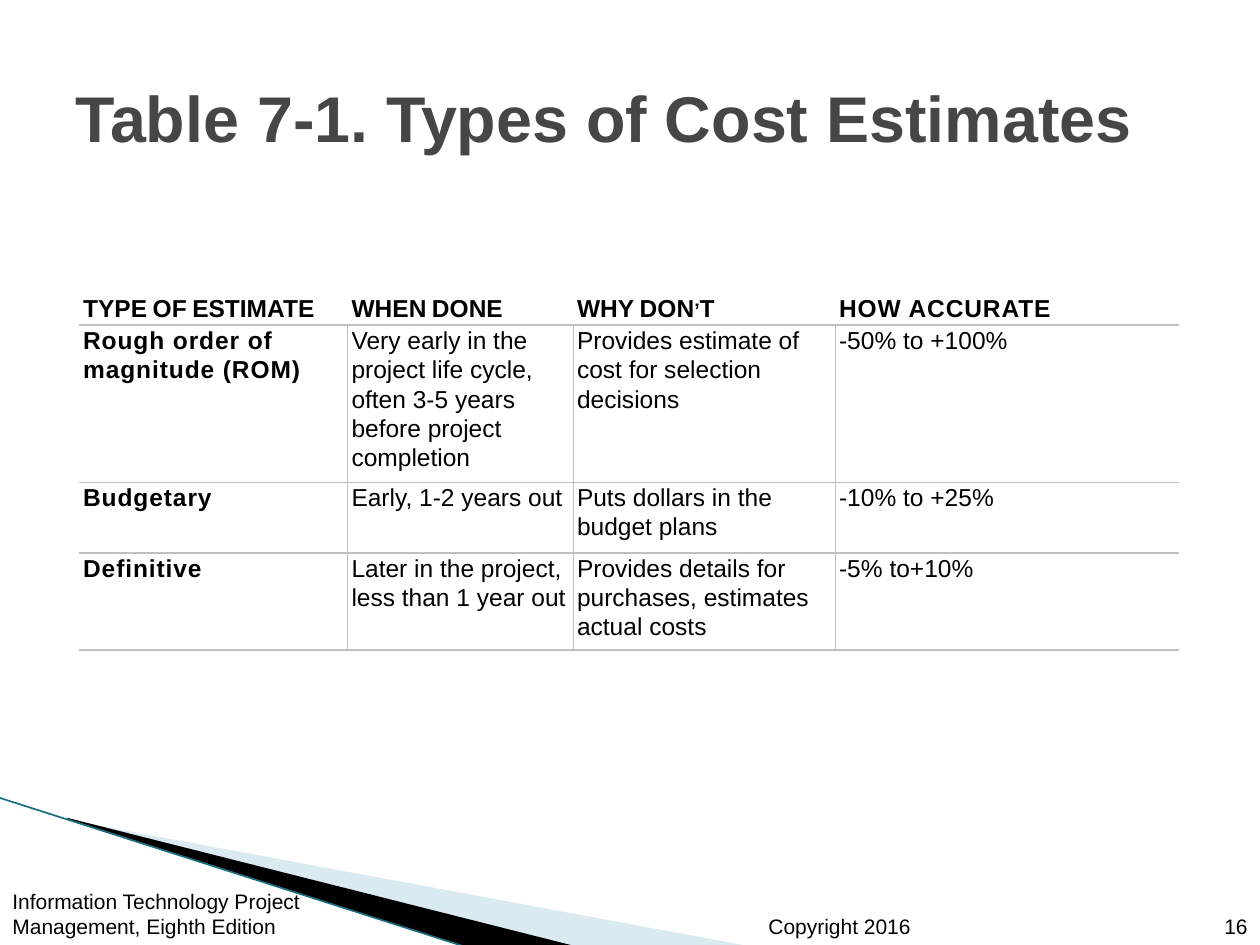
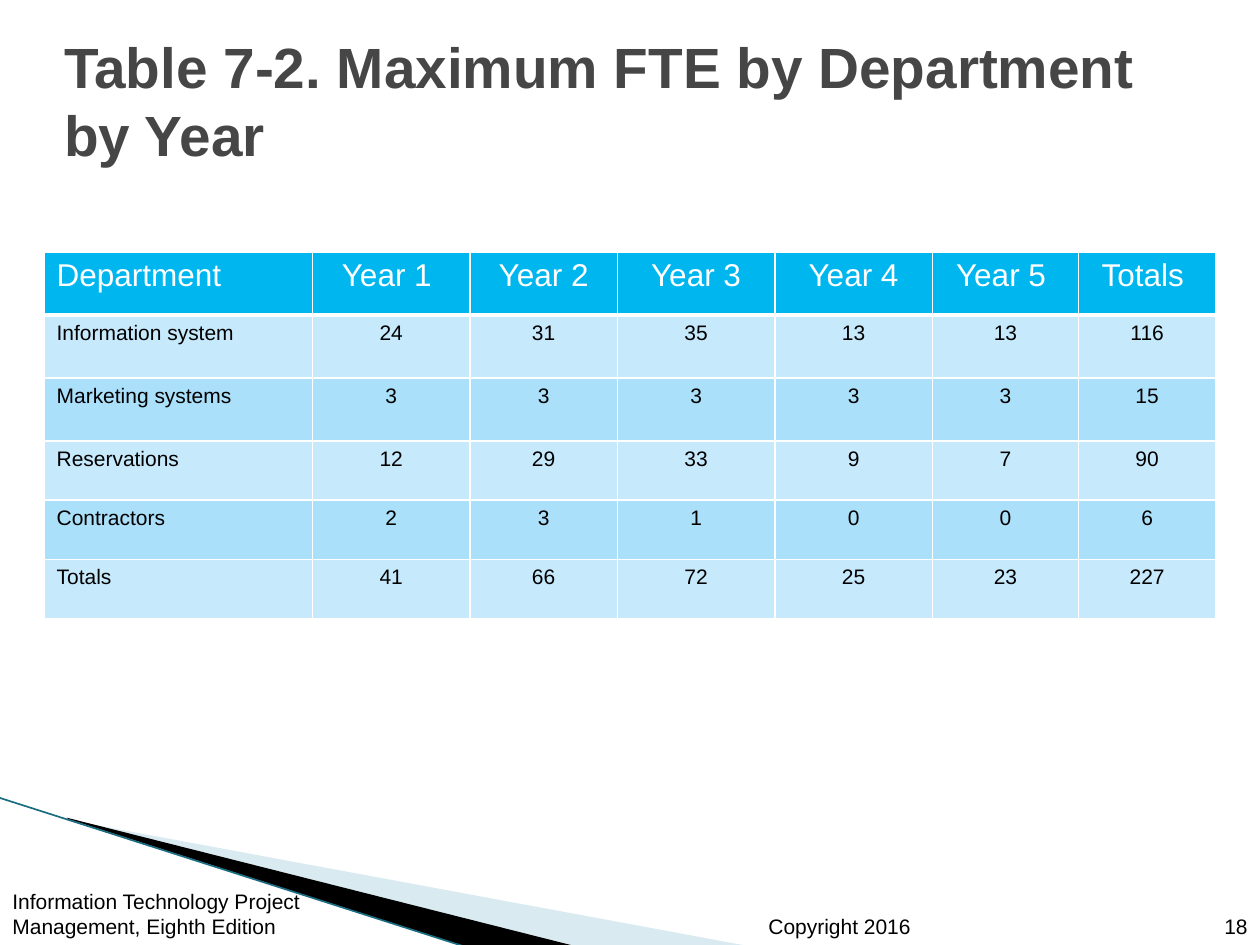
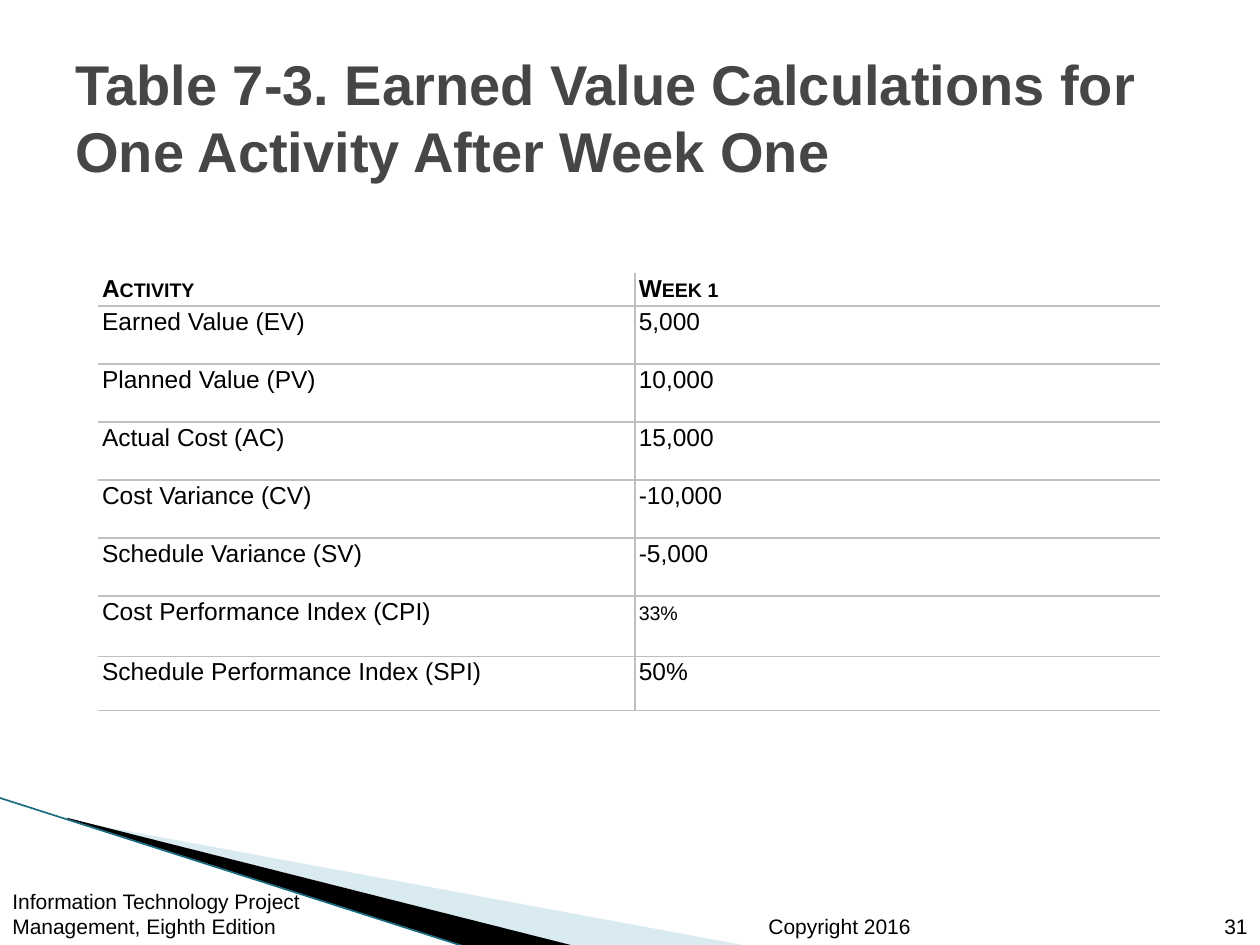
"""Build three slides of project cost tables with a shared title, swoosh and footer."""
from dataclasses import dataclass
from itertools import product

from lxml.etree import SubElement
from pptx import Presentation
from pptx.dml.color import RGBColor as Rgb
from pptx.enum.shapes import MSO_CONNECTOR as Connector
from pptx.enum.text import MSO_ANCHOR as Anchor, PP_ALIGN as Align
from pptx.oxml.ns import qn
from pptx.util import Inches, Pt


@dataclass(frozen=True)
class Theme:
    font: str = "Arial"
    title: str = "464646"
    text: str = "000000"
    white: str = "FFFFFF"
    rule: str = "BEBFBF"
    header: str = "00B6EF"
    bands: tuple = ("C6E9FC", "AAE0FA")
    swoosh: str = "A0CBDC"
    swoosh_alpha: int = 40
    edge: str = "1A6C80"
    small_size: float = 12
    ruled_size: float = 14
    header_size: float = 18


THEME = Theme()
BOOK = "Information Technology Project Management, Eighth Edition"
COPYRIGHT = "Copyright 2016"
PALE_FRAME = (0.78, 5.47, 4.16, 1.58)
PALE_SWOOSH = [(0.55, 6.51), (5.95, 7.51), (4.56, 7.51), (0.55, 6.5)]
DARK_FRAME = (-0.06, 6.33, 4.16, 0.92)
DARK_SWOOSH = [(0.53, 6.49), (4.57, 7.51), (3.72, 7.52), (0.54, 6.5)]
EDGE_LINE = (-0.01, 6.33, 3.71, 7.52)

PLAIN = {}
CAPS = {"caps": True}
BOLD_CAPS = {"bold": True, "caps": True}
BOLD_SPACED = {"bold": True, "spacing": 50}

SLIDES = [
    {
        "title": "Table 7-1. Types of Cost Estimates",
        "title_at": (0.5, 0.3, 9, 1.25), "title_size": 36.9,
        "book_at": (0, 6.92, 2.92, 0.58), "number": "16",
        "kind": "ruled", "table_at": (0.63, 2.33), "table_height": 2.84,
        "columns": [2.13, 1.79, 2.08, 2.73],
        "heights": [0.23, 1.18, 0.56, 0.77],
        "label_style": BOLD_SPACED, "header_dividers": False,
        "styles": {(0, 3): BOLD_SPACED},
        "rows": [
            ["TYPE OF ESTIMATE", "WHEN DONE", "WHY DON’T", "HOW ACCURATE"],
            ["Rough order of magnitude (ROM)",
             "Very early in the project life cycle, often 3-5 years before project completion",
             "Provides estimate of cost for selection decisions", "-50% to +100%"],
            ["Budgetary", "Early, 1-2 years out",
             "Puts dollars in the budget plans", "-10% to +25%"],
            ["Definitive", "Later in the project, less than 1 year out",
             "Provides details for purchases, estimates actual costs", "-5% to+10%"],
        ],
    },
    {
        "title": "Table 7-2. Maximum FTE by Department by Year",
        "title_at": (0.41, 0.17, 9.09, 1.25), "title_size": 32.4,
        "book_at": (0, 7, 2.92, 0.5), "number": "18",
        "kind": "banded", "table_at": (0.35, 2), "table_height": 2.92,
        "columns": [2.13, 1.25, 1.17, 1.25, 1.25, 1.16, 1.09],
        "heights": [0.5] * 3 + [0.47] * 3,
        "rows": [
            ["Department", "Year 1 ", "Year 2", "Year 3", "Year 4", "Year 5 ", "Totals "],
            ["Information system", "24", "31", "35", "13", "13", "116"],
            ["Marketing systems", "3", "3", "3", "3", "3", "15"],
            ["Reservations", "12", "29", "33", "9", "7", "90"],
            ["Contractors", "2", "3", "1", "0", "0", "6"],
            ["Totals", "41", "66", "72", "25", "23", "227"],
        ],
    },
    {
        "title": "Table 7-3. Earned Value Calculations for One Activity After Week One",
        "title_at": (0.5, 0.3, 9, 1.25), "title_size": 32,
        "book_at": (0, 7, 2.83, 0.5), "number": "31",
        "kind": "ruled", "table_at": (0.78, 2.17), "table_height": 3.48,
        "columns": [4.26, 4.17],
        "heights": [0.26] + [0.46] * 5 + [0.48, 0.43],
        "label_style": PLAIN, "header_dividers": True,
        "styles": {(6, 1): CAPS},
        "rows": [
            ["Activity", "Week 1"],
            ["Earned Value (EV)", "5,000"],
            ["Planned Value (PV)", "10,000"],
            ["Actual Cost (AC)", "15,000"],
            ["Cost Variance (CV)", "-10,000"],
            ["Schedule Variance (SV)", "-5,000"],
            ["Cost Performance Index (CPI)", "33%"],
            ["Schedule Performance Index (SPI)", "50%"],
        ],
    },
]


def add_span(para, text, size, color=THEME.text, bold=False, caps=False, spacing=0):
    span = para.add_run()
    span.text = text
    span.font.name = THEME.font
    span.font.size = Pt(size)
    span.font.bold = bold
    span.font.color.rgb = Rgb.from_string(color)
    properties = span._r.get_or_add_rPr()
    if caps:
        properties.set("cap", "small")
    if spacing:
        properties.set("spc", str(spacing))


def add_text(page, at, text, size, anchor=Anchor.BOTTOM, align=Align.LEFT, **look):
    box = page.shapes.add_textbox(*map(Inches, at))
    frame = box.text_frame
    frame.word_wrap = True
    frame.vertical_anchor = anchor
    para = frame.paragraphs[0]
    para.alignment = align
    add_span(para, text, size, **look)


def set_frame(shape, at):
    left, top, width, height = map(Inches, at)
    shift_x, shift_y = shape.left - left, shape.top - top
    shape.left, shape.top, shape.width, shape.height = left, top, width, height
    outline = next(shape._element.iter(qn("a:path")))
    outline.set("w", str(width))
    outline.set("h", str(height))
    for point in outline.iter(qn("a:pt")):
        point.set("x", str(int(point.get("x")) + shift_x))
        point.set("y", str(int(point.get("y")) + shift_y))


def add_outline(page, at, points, color, alpha=100):
    corners = [(Inches(x), Inches(y)) for x, y in points]
    builder = page.shapes.build_freeform(*corners[0])
    builder.add_line_segments(corners[1:], close=True)
    shape = builder.convert_to_shape()
    set_frame(shape, at)
    shape.shadow.inherit = False
    shape.line.fill.background()
    shape.fill.solid()
    shape.fill.fore_color.rgb = Rgb.from_string(color)
    if alpha < 100:
        tint = shape._element.spPr.find(f"{qn('a:solidFill')}/{qn('a:srgbClr')}")
        SubElement(tint, qn("a:alpha")).set("val", str(alpha * 1000))


def add_background(page):
    add_outline(page, PALE_FRAME, PALE_SWOOSH, THEME.swoosh, THEME.swoosh_alpha)
    add_outline(page, DARK_FRAME, DARK_SWOOSH, THEME.text)
    edge = page.shapes.add_connector(Connector.STRAIGHT, *map(Inches, EDGE_LINE))
    edge.line.color.rgb = Rgb.from_string(THEME.edge)
    edge.line.width = Pt(0.95)
    SubElement(edge._element.spPr, qn("a:effectLst"))
    add_text(page, (6, 7.1, 1.75, 0.4), COPYRIGHT, THEME.small_size)


def set_borders(cell, color, widths):
    properties = cell._tc.get_or_add_tcPr()
    for side in "LRTB":
        width = widths.get(side, 0)
        line = SubElement(properties, qn(f"a:ln{side}"), w=str(Pt(width)))
        if width:
            fill = SubElement(line, qn("a:solidFill"))
            SubElement(fill, qn("a:srgbClr"), val=color)
        else:
            SubElement(line, qn("a:noFill"))


def fill_ruled_cell(cell, row, column, content):
    cell.margin_left = cell.margin_right = Inches(0.03)
    cell.margin_top = cell.margin_bottom = 0
    divided = row > 0 or content["header_dividers"]
    last = len(content["columns"]) - 1
    set_borders(cell, THEME.rule, {
        "L": int(divided and column > 0),
        "R": int(divided and column < last),
        "T": int(row > 0),
        "B": 1,
    })
    cell.fill.background()
    usual = BOLD_CAPS if row == 0 else content["label_style"] if column == 0 else PLAIN
    style = content["styles"].get((row, column), usual)
    para = cell.text_frame.paragraphs[0]
    para.line_spacing = 1.07
    add_span(para, content["rows"][row][column], THEME.ruled_size, **style)


def fill_banded_cell(cell, row, column, content):
    header = row == 0
    set_borders(cell, THEME.white, {
        "L": 1, "R": 1, "T": 3 if row == 1 else 1, "B": 3 if header else 1,
    })
    cell.fill.solid()
    band = THEME.header if header else THEME.bands[(row - 1) % 2]
    cell.fill.fore_color.rgb = Rgb.from_string(band)
    para = cell.text_frame.paragraphs[0]
    para.alignment = Align.CENTER if column else Align.LEFT
    add_span(para, content["rows"][row][column],
             THEME.header_size if header else THEME.small_size,
             THEME.white if header else THEME.text)


CELL_FILLERS = {"ruled": fill_ruled_cell, "banded": fill_banded_cell}


def add_grid(page, content):
    columns, heights = content["columns"], content["heights"]
    area = (*content["table_at"], sum(columns), content["table_height"])
    holder = page.shapes.add_table(len(heights), len(columns), *map(Inches, area))
    grid = holder.table
    grid.first_row = grid.horz_banding = False
    for column, width in zip(grid.columns, columns):
        column.width = Inches(width)
    for row, height in zip(grid.rows, heights):
        row.height = Inches(height)
    holder.height = Inches(content["table_height"])
    for row, column in product(range(len(heights)), range(len(columns))):
        CELL_FILLERS[content["kind"]](grid.cell(row, column), row, column, content)


def add_page(deck, content):
    page = deck.slides.add_slide(deck.slide_layouts[6])
    add_background(page)
    add_text(page, content["title_at"], content["title"], content["title_size"],
             Anchor.MIDDLE, color=THEME.title, bold=True)
    add_grid(page, content)
    add_text(page, content["book_at"], BOOK, THEME.small_size)
    add_text(page, (9.39, 7.1, 0.61, 0.4), content["number"], THEME.small_size,
             align=Align.RIGHT)


def main():
    deck = Presentation()
    deck.slide_width, deck.slide_height = Inches(10), Inches(7.5)
    for content in SLIDES:
        add_page(deck, content)
    deck.save("out.pptx")


if __name__ == "__main__":
    main()
